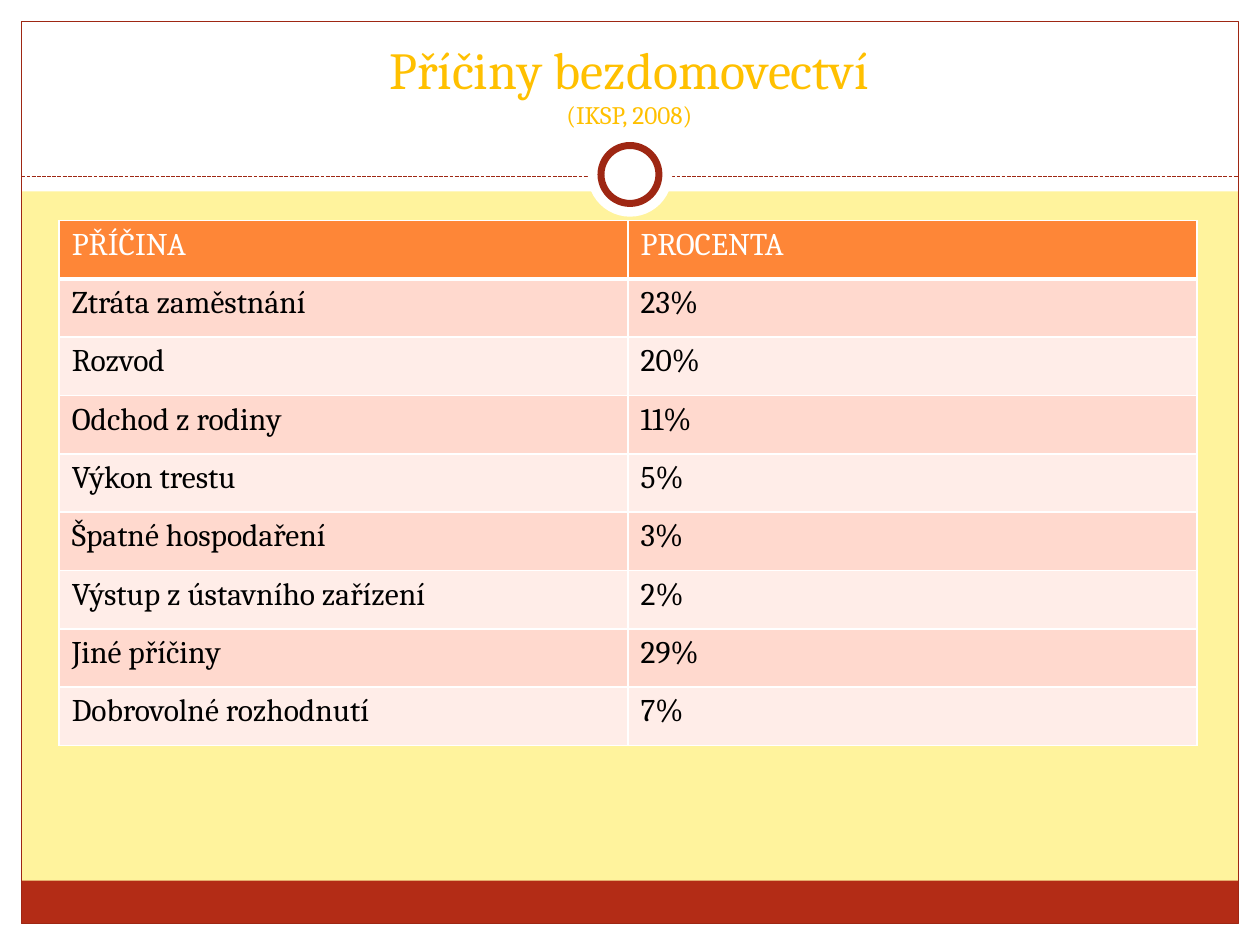
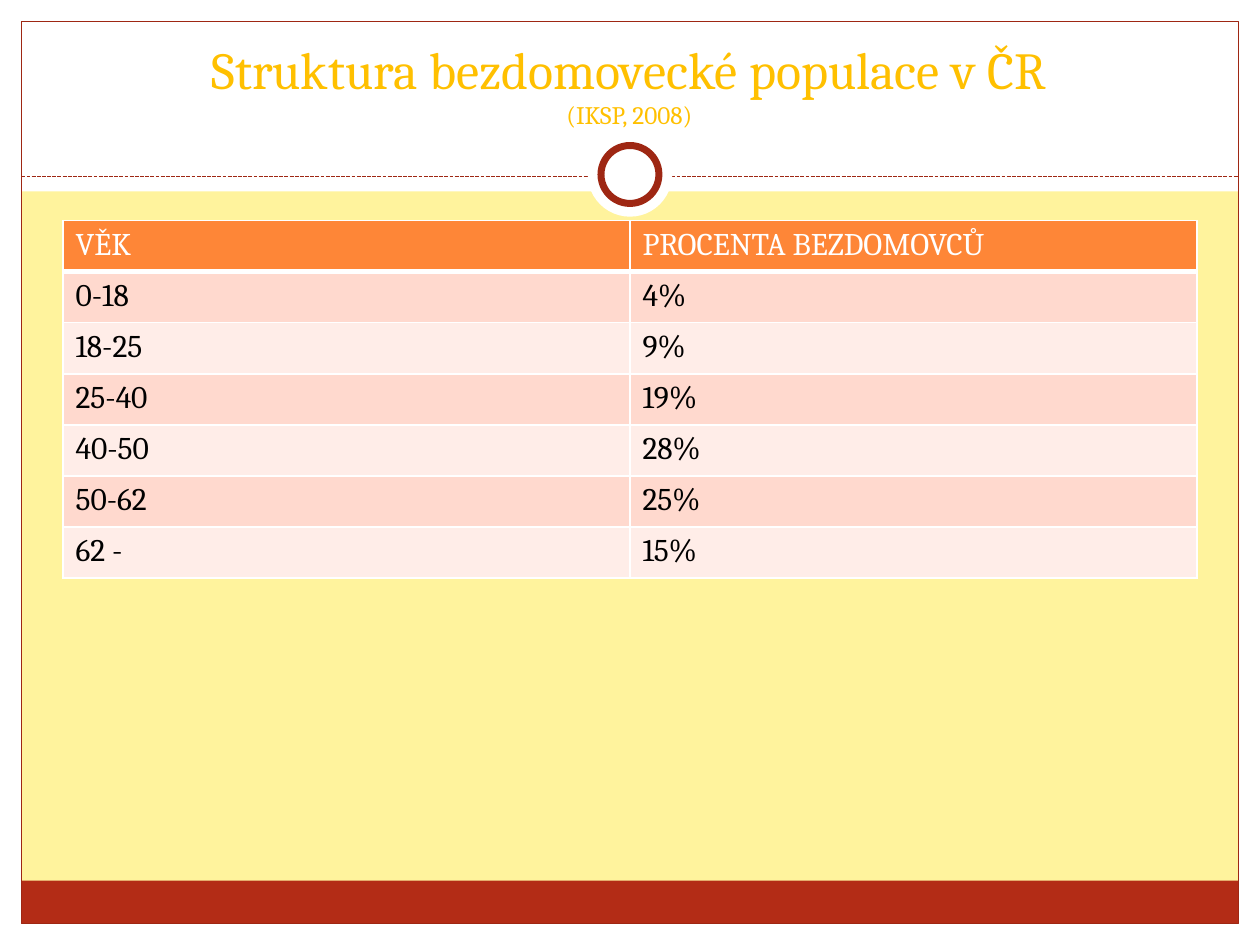
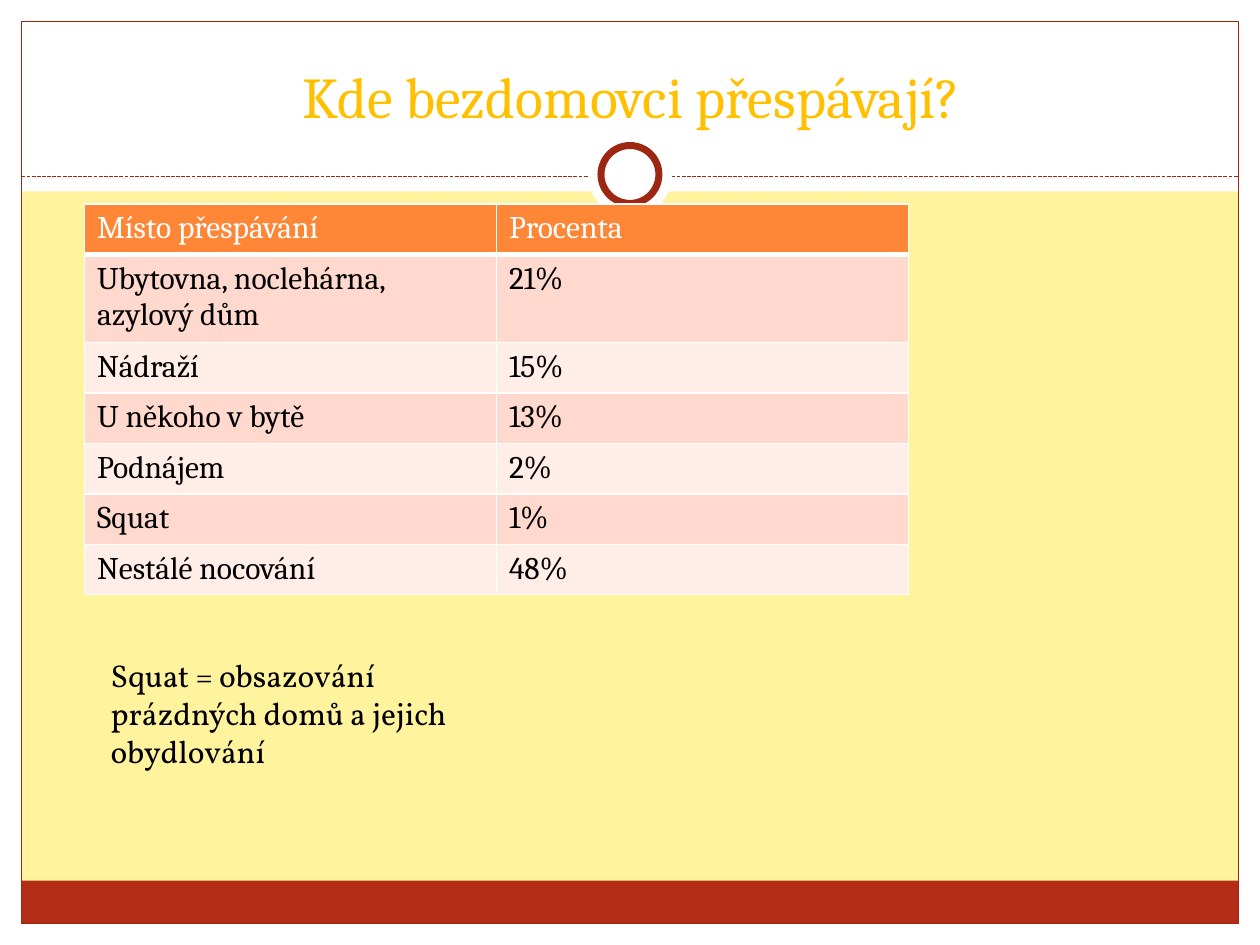
import dataclasses

import lxml.etree
import pptx
import pptx.dml.color
import pptx.enum.dml
import pptx.enum.shapes
import pptx.enum.text
import pptx.oxml.ns
import pptx.util

RGBColor = pptx.dml.color.RGBColor
SHAPE = pptx.enum.shapes.MSO_SHAPE
Pt = pptx.util.Pt

WHITE = RGBColor(0xFF, 0xFF, 0xFF)
BLACK = RGBColor(0x00, 0x00, 0x00)
CREAM = RGBColor(0xFF, 0xF3, 0x9D)
GOLD = RGBColor(0xFF, 0xC0, 0x00)
BRICK = RGBColor(0xB3, 0x2C, 0x16)
DARK_RED = RGBColor(0x9E, 0x27, 0x13)
ORANGE = RGBColor(0xFE, 0x86, 0x37)
ROW_TINTS = (RGBColor(0xFF, 0xD9, 0xCE), RGBColor(0xFF, 0xED, 0xE8))

TITLE_FONT = TABLE_FONT = "Cambria"
NOTE_FONT = "Vollkorn"
BODY_SIZE = Pt(18)

SLIDE_W, SLIDE_H = pptx.util.Inches(10), pptx.util.Inches(7.5)
COLS, ROWS = 100, 75
MARGIN = 1.7


@dataclasses.dataclass
class Box:
    x: float
    y: float
    w: float
    h: float

    def emu(self):
        col, row = SLIDE_W / COLS, SLIDE_H / ROWS
        return [round(v) for v in (self.x * col, self.y * row, self.w * col, self.h * row)]

    def inset(self, d):
        return Box(self.x + d, self.y + d, self.w - 2 * d, self.h - 2 * d)


SLIDE = Box(0, 0, COLS, ROWS)
TITLE_BOX = Box(3.3, 2.5, 93.3, 8.3)


def add_figure(s, kind, box, fill=None, line=None, width=0.75):
    sp = s.shapes.add_shape(kind, *box.emu())
    sp.shadow.inherit = False
    if fill is None:
        sp.fill.background()
    else:
        sp.fill.solid()
        sp.fill.fore_color.rgb = fill
    if line is None:
        sp.line.fill.background()
    else:
        sp.line.color.rgb = line
        sp.line.width = Pt(width)


def add_divider(s, x1, x2, y):
    x, y, w, _ = Box(x1, y, x2 - x1, 0).emu()
    line = s.shapes.add_connector(pptx.enum.shapes.MSO_CONNECTOR.STRAIGHT, x, y, x + w, y)
    line.line.color.rgb = DARK_RED
    line.line.width = Pt(0.75)
    line.line.dash_style = pptx.enum.dml.MSO_LINE.SQUARE_DOT
    sp_pr = line.element.find(pptx.oxml.ns.qn("p:spPr"))
    lxml.etree.SubElement(sp_pr, pptx.oxml.ns.qn("a:effectLst"))


def add_frame(s, box):
    right, bottom = box.x + box.w, box.y + box.h
    header_h, footer_h = 15.2, 3.4
    inner = box.inset(MARGIN)
    white_bands = (
        Box(box.x, bottom - MARGIN, box.w, MARGIN),
        Box(box.x, box.y, box.w, header_h),
        Box(box.x, box.y, MARGIN, box.h),
        Box(right - MARGIN, box.y, MARGIN, box.h),
    )
    for band in white_bands:
        add_figure(s, SHAPE.RECTANGLE, band, WHITE)
    footer = Box(inner.x, bottom - MARGIN - footer_h, inner.w, footer_h)
    add_figure(s, SHAPE.RECTANGLE, footer, BRICK)
    add_figure(s, SHAPE.RECTANGLE, inner, line=DARK_RED)
    add_divider(s, inner.x, inner.x + inner.w, box.y + 14)
    medallion = Box(box.x + box.w / 2 - 3.35, box.y + 10.5, 6.7, 6.7)
    add_figure(s, SHAPE.OVAL, medallion, WHITE)
    add_figure(s, SHAPE.OVAL, medallion.inset(1.05), WHITE, DARK_RED, 4)


def move_to_layout(s, layout):
    frame = [sp.element for sp in s.shapes if not sp.is_placeholder]
    for i, element in enumerate(frame):
        layout.shapes.element.insert(2 + i, element)


def set_title(s, box, text, size, source=None):
    sp = s.shapes.title
    sp.left, sp.top, sp.width, sp.height = box.emu()
    tf = sp.text_frame
    tf.auto_size = pptx.enum.text.MSO_AUTO_SIZE.NONE
    tf.vertical_anchor = pptx.enum.text.MSO_ANCHOR.BOTTOM
    p = tf.paragraphs[0]
    p.alignment = pptx.enum.text.PP_ALIGN.CENTER
    p.font.name = TITLE_FONT
    p.font.size = Pt(size)
    p.font.color.rgb = GOLD
    p.add_run().text = text
    if source:
        p.add_line_break()
        r = p.add_run()
        r.text = source
        r.font.size = Pt(14.4)


def set_borders(cell, bottom_width):
    tc_pr = cell._tc.get_or_add_tcPr()
    for side, width in (("L", 1), ("R", 1), ("T", 1), ("B", bottom_width)):
        ln = lxml.etree.SubElement(tc_pr, pptx.oxml.ns.qn(f"a:ln{side}"), w=str(Pt(width)))
        fill = lxml.etree.SubElement(ln, pptx.oxml.ns.qn("a:solidFill"))
        lxml.etree.SubElement(fill, pptx.oxml.ns.qn("a:srgbClr"), val=str(WHITE))


def add_data_table(s, box, rows, weights=None):
    weights = weights or [1] * len(rows)
    x, y, w, h = box.emu()
    table = s.shapes.add_table(len(rows), len(rows[0]), x, y, w, h).table
    for row, weight in zip(table.rows, weights):
        row.height = round(h * weight / sum(weights))
    for i, values in enumerate(rows):
        header = i == 0
        for j, value in enumerate(values):
            cell = table.cell(i, j)
            set_borders(cell, 3 if header else 1)
            cell.fill.solid()
            cell.fill.fore_color.rgb = ORANGE if header else ROW_TINTS[(i - 1) % 2]
            cell.text = value
            p = cell.text_frame.paragraphs[0]
            p.font.name = TABLE_FONT
            p.font.size = BODY_SIZE
            p.font.bold = False
            p.font.color.rgb = WHITE if header else BLACK


def add_note(s, box, text):
    tf = s.shapes.add_textbox(*box.emu()).text_frame
    tf.word_wrap = True
    tf.auto_size = pptx.enum.text.MSO_AUTO_SIZE.SHAPE_TO_FIT_TEXT
    tf.text = text
    p = tf.paragraphs[0]
    p.font.name = NOTE_FONT
    p.font.size = BODY_SIZE
    p.font.color.rgb = BLACK


def build_causes(s):
    set_title(s, TITLE_BOX, "Příčiny bezdomovectví", 29.7, "(IKSP, 2008)")
    add_data_table(s, Box(4.7, 17.5, 90.3, 41.7), [
        ("PŘÍČINA", "PROCENTA"),
        ("Ztráta zaměstnání", "23%"),
        ("Rozvod", "20%"),
        ("Odchod z rodiny", "11%"),
        ("Výkon trestu", "5%"),
        ("Špatné hospodaření", "3%"),
        ("Výstup z ústavního zařízení", "2%"),
        ("Jiné příčiny", "29%"),
        ("Dobrovolné rozhodnutí", "7%"),
    ])


def build_ages(s):
    set_title(s, TITLE_BOX, "Struktura bezdomovecké populace v ČR", 29.7, "(IKSP, 2008)")
    add_data_table(s, Box(5, 17.5, 90, 28.4), [
        ("VĚK", "PROCENTA BEZDOMOVCŮ"),
        ("0-18", "4%"),
        ("18-25", "9%"),
        ("25-40", "19%"),
        ("40-50", "28%"),
        ("50-62", "25%"),
        ("62 -", "15%"),
    ])


def build_shelters(s):
    set_title(s, Box(5.1, 2.9, 90, 7.9), "Kde bezdomovci přespávají?", 33)
    add_data_table(s, Box(6.7, 16.2, 65.4, 31), [
        ("Místo přespávání", "Procenta"),
        ("Ubytovna, noclehárna, azylový dům", "21%"),
        ("Nádraží", "15%"),
        ("U někoho v bytě", "13%"),
        ("Podnájem", "2%"),
        ("Squat", "1%"),
        ("Nestálé nocování", "48%"),
    ], weights=[4, 7, 4, 4, 4, 4, 4])
    add_note(s, Box(7.8, 51.6, 33.5, 10.1),
             "Squat = obsazování prázdných domů a jejich obydlování")


def main():
    prs = pptx.Presentation()
    prs.slide_width, prs.slide_height = SLIDE_W, SLIDE_H
    layout = prs.slide_layouts.get_by_name("Title Only")
    layout.background.fill.solid()
    layout.background.fill.fore_color.rgb = CREAM
    slides = [prs.slides.add_slide(layout) for _ in range(3)]
    add_frame(slides[0], SLIDE)
    move_to_layout(slides[0], layout)
    for build, s in zip((build_causes, build_ages, build_shelters), slides):
        build(s)
    prs.save("out.pptx")


if __name__ == "__main__":
    main()
